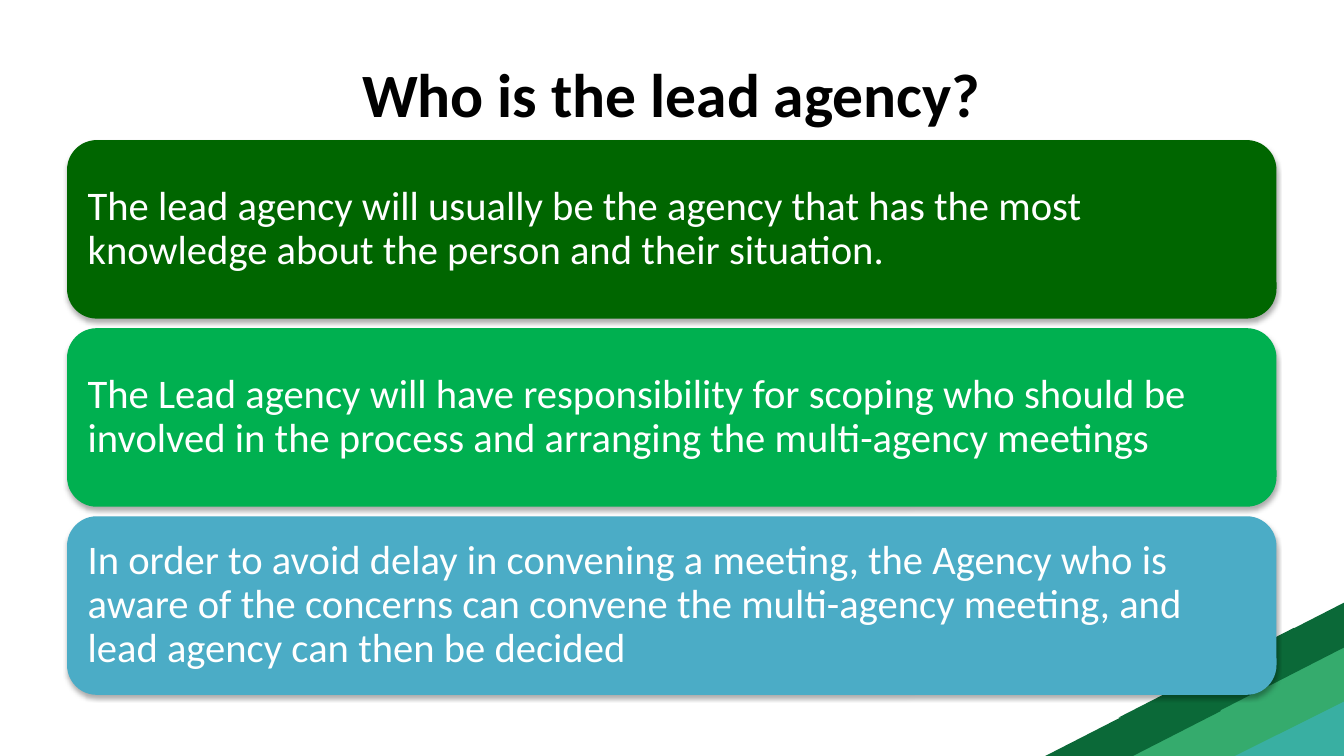
"""Builds the slide on who the lead agency is."""
from dataclasses import dataclass

from lxml import etree
from pptx import Presentation
from pptx.dml.color import RGBColor
from pptx.enum.shapes import MSO_SHAPE
from pptx.enum.text import MSO_ANCHOR, PP_ALIGN
from pptx.oxml import parse_xml
from pptx.oxml.ns import nsdecls, qn
from pptx.util import Cm, Pt

CARD = MSO_SHAPE.ROUNDED_RECTANGLE
STRIPE = MSO_SHAPE.DIAGONAL_STRIPE
TRIANGLE = MSO_SHAPE.RIGHT_TRIANGLE
MIDDLE = MSO_ANCHOR.MIDDLE
LEFT, CENTER = PP_ALIGN.LEFT, PP_ALIGN.CENTER

SHADOW = (
    f'<a:effectLst {nsdecls("a")}>'
    '<a:outerShdw blurRad="44450" dist="27940" dir="5400000" rotWithShape="0">'
    '<a:srgbClr val="000000"><a:alpha val="32000"/></a:srgbClr>'
    '</a:outerShdw></a:effectLst>'
)


@dataclass(frozen=True)
class Theme:
    font: str = "Calibri"
    title_size: int = 44
    card_size: int = 29
    title: str = "000000"
    card_text: str = "FFFFFF"
    cards: tuple = ("006600", "00B050", "4BACC6")
    corner: str = "39AFA2"
    light_stripe: str = "35AB6D"
    dark_stripe: str = "0B6938"


class SlideBuilder:
    def __init__(self, prs, theme):
        self.theme = theme
        self.s = prs.slides.add_slide(prs.slide_layouts[5])

    def set_text(self, sp, text, size, color, bold, align):
        tf = sp.text_frame
        tf.word_wrap = True
        tf.vertical_anchor = MIDDLE
        p = tf.paragraphs[0]
        p.alignment = align
        r = p.add_run()
        r.text = text
        style = {"name": self.theme.font, "size": Pt(size), "bold": bold}
        for key, value in style.items():
            setattr(r.font, key, value)
        r.font.color.rgb = RGBColor.from_string(color)
        return tf, p

    def title(self, text, x, y, w, h):
        sp = self.s.shapes.title
        box = {"left": x, "top": y, "width": w, "height": h}
        for key, value in box.items():
            setattr(sp, key, Cm(value))
        self.set_text(sp, text, self.theme.title_size, self.theme.title, True, CENTER)

    def shape(self, kind, x, y, w, h, color):
        sp = self.s.shapes.add_shape(kind, Cm(x), Cm(y), Cm(w), Cm(h))
        sp.shadow.inherit = False
        sp.fill.solid()
        sp.fill.fore_color.rgb = RGBColor.from_string(color)
        sp.line.fill.background()
        return sp

    def stripe(self, x, y, w, h, color):
        self.shape(STRIPE, x, y, w, h, color).rotation = 180

    def corner(self, x, y, w, h):
        sp = self.shape(TRIANGLE, x, y, w, h, self.theme.corner)
        sp._element.spPr.find(qn("a:xfrm")).set("flipH", "1")

    def card(self, text, x, y, w, h, color):
        sp = self.shape(CARD, x, y, w, h, color)
        props = sp._element.spPr
        etree.strip_elements(props, qn("a:effectLst"))
        props.append(parse_xml(SHADOW))
        tf, p = self.set_text(sp, text, self.theme.card_size, self.theme.card_text, False, LEFT)
        for side in ("left", "top", "right", "bottom"):
            setattr(tf, f"margin_{side}", Cm(0.3))
        p.line_spacing = 0.9


def main():
    prs = Presentation()
    prs.slide_width, prs.slide_height = Cm(33.87), Cm(19.05)
    theme = Theme()
    slide = SlideBuilder(prs, theme)

    slide.corner(31.01, 17.6, 2.95, 1.45)
    slide.stripe(28.27, 16.21, 5.69, 2.84, theme.light_stripe)
    for x, y in ((26.34, 16.79), (28.19, 15.82), (29.54, 15.14)):
        slide.stripe(x, y, 4.42, 2.26, theme.dark_stripe)

    slide.title("Who is the lead agency?", 1.69, 0.76, 30.48, 3.18)
    texts = (
        "The lead agency will usually be the agency that has the most "
        "knowledge about the person and their situation.",
        "The Lead agency will have responsibility for scoping who should be "
        "involved in the process and arranging the multi-agency meetings",
        "In order to avoid delay in convening a meeting, the Agency who is "
        "aware of the concerns can convene the multi-agency meeting, and "
        "lead agency can then be decided",
    )
    for i, (text, color) in enumerate(zip(texts, theme.cards)):
        slide.card(text, 1.69, 3.53 + i * 4.74, 30.48, 4.5, color)

    prs.save("out.pptx")


if __name__ == "__main__":
    main()
